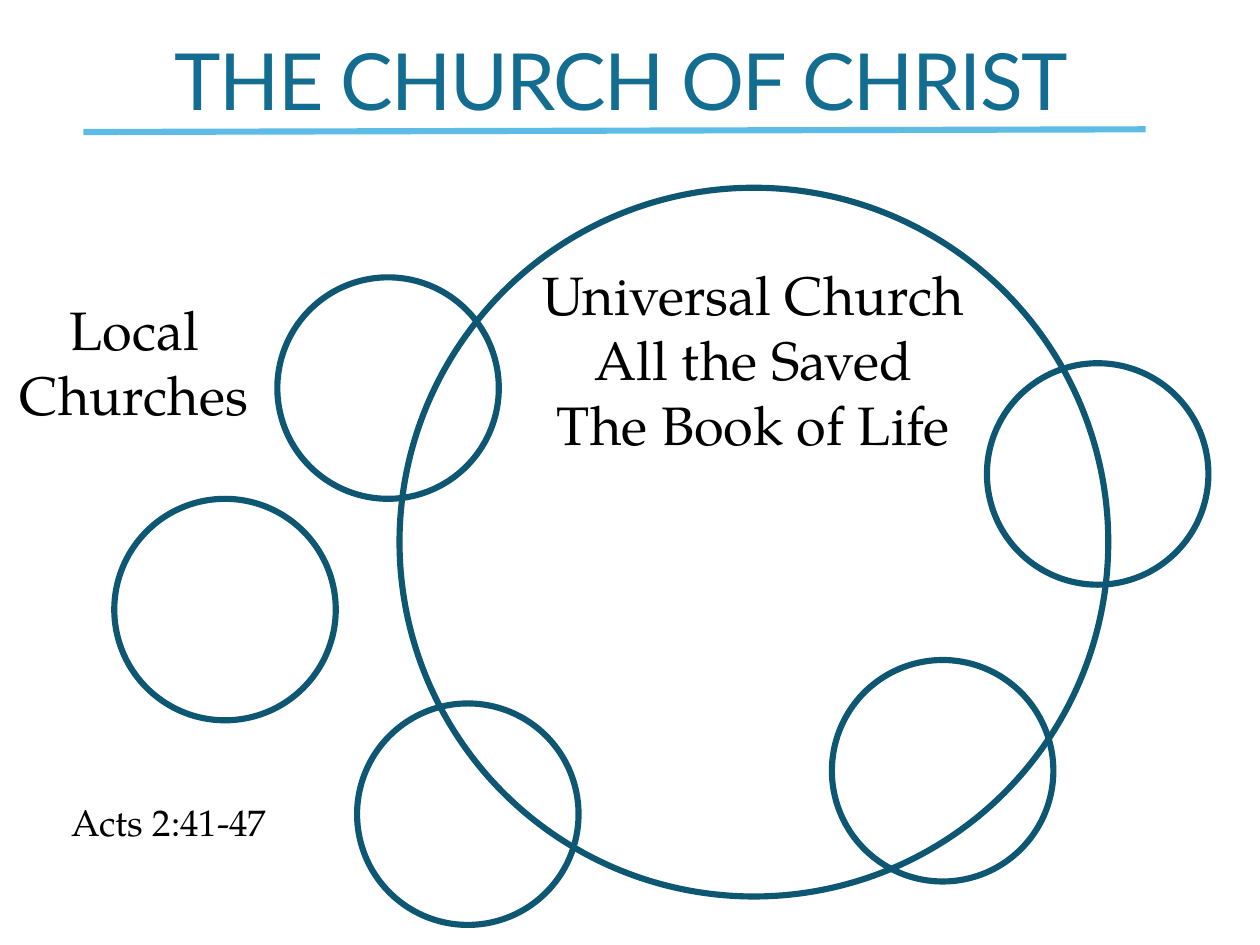
"""Build a slide of local churches around the universal church."""
from lxml.etree import SubElement
from pptx import Presentation
from pptx.dml.color import RGBColor
from pptx.enum.shapes import MSO_CONNECTOR, MSO_SHAPE
from pptx.enum.text import MSO_ANCHOR, PP_ALIGN
from pptx.oxml.ns import qn
from pptx.util import Pt

TEAL = RGBColor(0x13, 0x6D, 0x91)
DEEP = RGBColor(0x0E, 0x57, 0x72)
SKY = RGBColor(0x5C, 0xBC, 0xE6)
BLACK = RGBColor(0, 0, 0)
SERIF = "TeX Gyre Pagella"
SANS = "Lato"
STROKE = 5
INSET = 4.3

TITLE = ["THE CHURCH OF CHRIST"]
SAVED = ["Universal Church", "All the Saved", "The Book of Life"]
LOCAL = ["Local Churches"]
VERSE = ["Acts 2:41-47"]

WHOLE = (324.7, 152.6, 576)
SMALL = 180
PLACES = [(225.4, 225.4), (290.2, 571.7), (92.9, 405.4), (676.1, 536.4), (802.1, 295.2)]
RULE = (67.7, 107.3, 931, 105.1)


def add_ring(slide, left, top, size):
    ring = slide.shapes.add_shape(MSO_SHAPE.OVAL, Pt(left), Pt(top), Pt(size), Pt(size))
    ring.shadow.inherit = False
    ring.fill.background()
    ring.line.color.rgb = DEEP
    ring.line.width = Pt(STROKE)


def add_text(slide, lines, box, size, font=SERIF, color=BLACK,
             anchor=MSO_ANCHOR.MIDDLE, space=0):
    frame = slide.shapes.add_textbox(*map(Pt, box)).text_frame
    frame.word_wrap = True
    frame.vertical_anchor = anchor
    frame.margin_left = frame.margin_right = Pt(INSET)
    frame.margin_top = frame.margin_bottom = Pt(INSET)
    for i, line in enumerate(lines):
        para = frame.add_paragraph() if i else frame.paragraphs[0]
        para.alignment = PP_ALIGN.CENTER
        run = para.add_run()
        run.text = line
        run.font.name = font
        run.font.size = Pt(size)
        run.font.color.rgb = color
        if space:
            run._r.get_or_add_rPr().set("spc", str(round(space * 100)))


def add_rule(slide):
    rule = slide.shapes.add_connector(MSO_CONNECTOR.STRAIGHT, *map(Pt, RULE))
    rule.line.color.rgb = SKY
    rule.line.width = Pt(STROKE)
    SubElement(rule._element.spPr, qn("a:effectLst"))


def main():
    deck = Presentation()
    deck.slide_width, deck.slide_height = Pt(1024), Pt(768)
    slide = deck.slides.add_slide(deck.slide_layouts[6])
    add_rule(slide)
    add_text(slide, TITLE, (23.8, 23.8, 962, 81.4), 64, SANS, TEAL, space=-1.3)
    add_ring(slide, *WHOLE)
    add_text(slide, SAVED, (420.5, 208.1, 383.8, 167.8), 44, anchor=MSO_ANCHOR.TOP)
    for left, top in PLACES:
        add_ring(slide, left, top, SMALL)
    add_text(slide, LOCAL, (-37.4, 236.2, 293, 114.5), 44)
    add_text(slide, VERSE, (37.4, 645.1, 200.2, 44.6), 30)
    deck.save("out.pptx")


if __name__ == "__main__":
    main()
